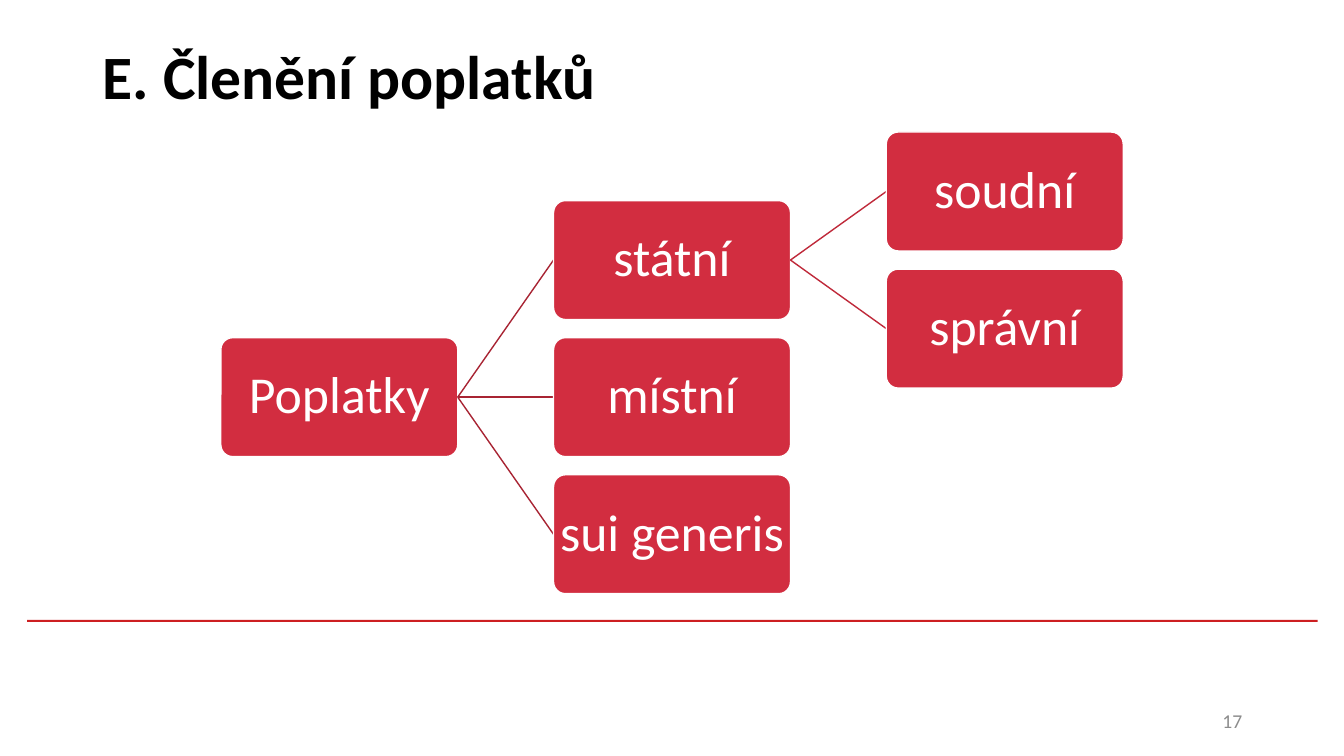
from pptx import Presentation
from pptx.dml.color import RGBColor
from pptx.enum.shapes import MSO_CONNECTOR, MSO_SHAPE
from pptx.enum.text import MSO_ANCHOR, PP_ALIGN
from pptx.oxml.ns import qn
from pptx.util import Pt
from lxml import etree

RECT, ROUND = MSO_SHAPE.RECTANGLE, MSO_SHAPE.ROUNDED_RECTANGLE
STRAIGHT = MSO_CONNECTOR.STRAIGHT
MIDDLE = MSO_ANCHOR.MIDDLE
LEFT, CENTER, RIGHT = PP_ALIGN.LEFT, PP_ALIGN.CENTER, PP_ALIGN.RIGHT

WHITE = RGBColor(0xFF, 0xFF, 0xFF)
BLACK = RGBColor(0x00, 0x00, 0x00)
GREY = RGBColor(0x8C, 0x8C, 0x8C)
RED = RGBColor(0xD2, 0x2D, 0x40)
RULE = RGBColor(0xCD, 0x1F, 0x21)
DARK = RGBColor(0xA8, 0x24, 0x33)
MID = RGBColor(0xBF, 0x29, 0x3A)

FONT = "Calibri"
SCALE = 9144  # EMU in one px, 100 px to the inch
NODE_W, NODE_H = 235, 118
COL, ROW = 330, 68  # column step, half-row step

# Label, column, half-row, parent, link colour
NODES = [
    ("Poplatky", 0, 3, None, None),
    ("státní", 1, 1, "Poplatky", DARK),
    ("soudní", 2, 0, "státní", MID),
    ("správní", 2, 2, "státní", MID),
    ("místní", 1, 3, "Poplatky", DARK),
    ("sui generis", 1, 5, "Poplatky", DARK),
]


def px(*vals):
    return [v * SCALE for v in vals]


def write(shape, text, size, color, align, bold=False):
    frame = shape.text_frame
    frame.text = text
    frame.vertical_anchor = MIDDLE
    para = frame.paragraphs[0]
    para.alignment = align
    font = para.runs[0].font
    font.name, font.size, font.bold = FONT, Pt(size), bold
    font.color.rgb = color


def label(slide, box, *style):
    shape = slide.shapes.add_textbox(*px(*box))
    shape.text_frame.word_wrap = True
    write(shape, *style)


def rule(slide, box):
    bar = slide.shapes.add_shape(RECT, *px(*box))
    bar.shadow.inherit = False
    bar.fill.solid()
    bar.fill.fore_color.rgb = RULE
    bar.line.fill.background()


def link(slide, start, end, color):
    line = slide.shapes.add_connector(STRAIGHT, *px(*start, *end))
    line.line.color.rgb = color
    line.line.width = Pt(1)
    props = line._element.find(qn("p:spPr"))
    etree.SubElement(props, qn("a:effectLst"))


def node(slide, text, left, top):
    shape = slide.shapes.add_shape(ROUND, *px(left, top, NODE_W, NODE_H))
    shape.shadow.inherit = False
    shape.adjustments[0] = 0.1
    shape.fill.solid()
    shape.fill.fore_color.rgb = RED
    shape.line.color.rgb = WHITE
    shape.line.width = Pt(1)
    frame = shape.text_frame
    frame.word_wrap = False
    frame.margin_left = frame.margin_right = 3 * SCALE
    frame.margin_top = frame.margin_bottom = 3 * SCALE
    write(shape, text, 37, WHITE, CENTER)
    frame.paragraphs[0].line_spacing = 0.9


def tree(slide, left, top):
    spots = {}
    for text, col, row, parent, color in NODES:
        x, y = left + col * COL, top + row * ROW
        mid = y + NODE_H // 2
        spots[text] = (x + NODE_W, mid)
        if parent:
            link(slide, spots[parent], (x, mid), color)
        node(slide, text, x, y)


def main():
    prs = Presentation()
    prs.slide_width, prs.slide_height = px(1333, 750)
    slide = prs.slides.add_slide(prs.slide_layouts[6])
    # Rule above the footer
    rule(slide, (27, 615, 1280, 2))
    # Title
    label(slide, (92, 2, 1150, 145), "E. Členění poplatků", 44, BLACK, LEFT, True)
    # Tree of fees
    tree(slide, 219, 131)
    # Page number
    label(slide, (942, 695, 300, 40), "17", 14, GREY, RIGHT)
    prs.save("out.pptx")


if __name__ == "__main__":
    main()
